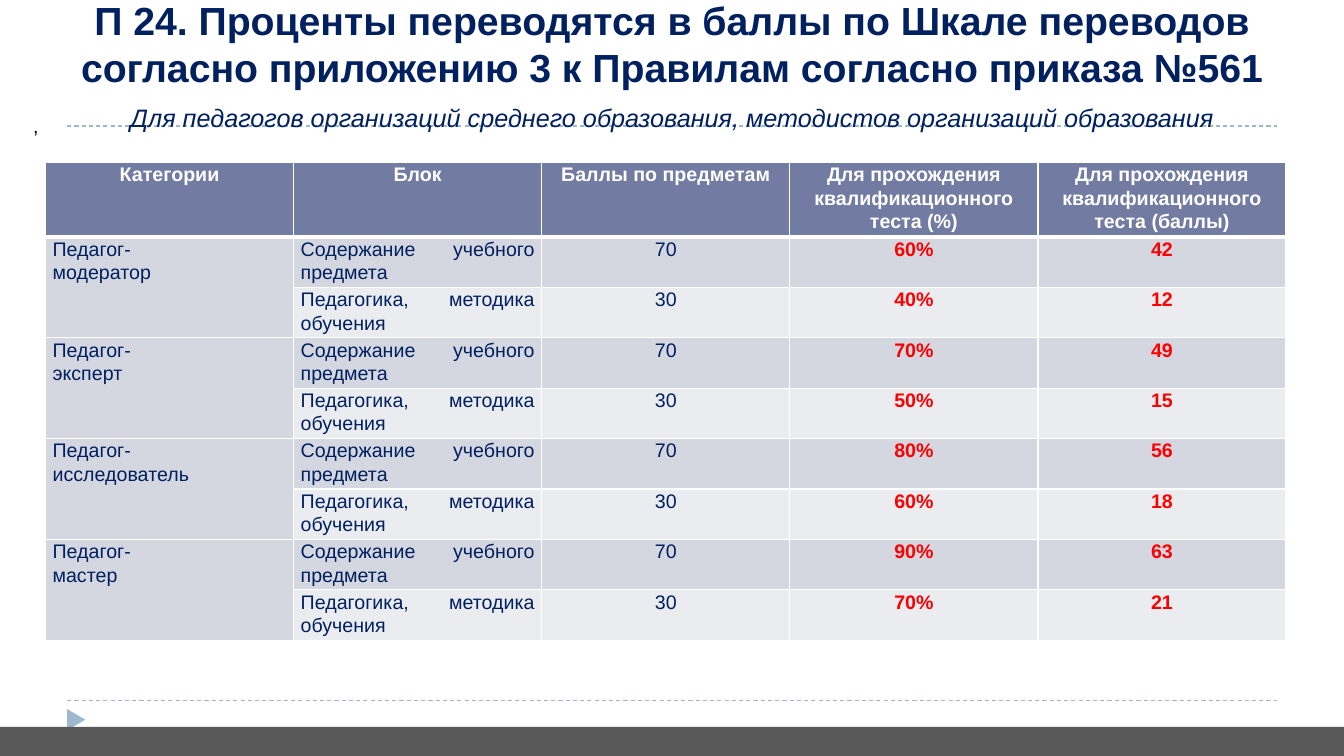
from dataclasses import dataclass

from lxml import etree
from pptx import Presentation
from pptx.dml.color import RGBColor
from pptx.enum.dml import MSO_LINE
from pptx.enum.shapes import MSO_CONNECTOR, MSO_SHAPE
from pptx.enum.text import MSO_ANCHOR, MSO_AUTO_SIZE, PP_ALIGN
from pptx.oxml.ns import qn
from pptx.util import Inches, Pt

SLIDE_WIDTH, SLIDE_HEIGHT = Inches(13.33), Inches(7.5)
NAVY, RED, WHITE, BLACK = "002060", "FF0000", "FFFFFF", "000000"
PALE_BLUE, GREY, HEADER_FILL = "9FB8CD", "595959", "727CA3"
BAND_FILLS = ("D5D7E0", "EBECF0")


@dataclass(frozen=True)
class Area:
    """A rectangle in percent of the slide's width and height."""
    left: float
    top: float
    width: float
    height: float

    def box(self) -> tuple:
        return across(self.left), down(self.top), across(self.width), down(self.height)


@dataclass(frozen=True)
class Style:
    size: int
    color: str
    bold: bool = False
    italic: bool = False
    align: PP_ALIGN = PP_ALIGN.CENTER
    spacing: float = 1.0


@dataclass(frozen=True)
class Block:
    name: str
    points: int


@dataclass(frozen=True)
class Category:
    name: str
    percents: tuple


HEADERS = (
    "Категории",
    "Блок",
    "Баллы по предметам",
    "Для прохождения квалификационного теста (%)",
    "Для прохождения квалификационного теста (баллы)",
)
BLOCKS = (
    Block("Содержание учебного предмета", 70),
    Block("Педагогика, методика обучения", 30),
)
CATEGORIES = (
    Category("модератор", (60, 40)),
    Category("эксперт", (70, 50)),
    Category("исследователь", (80, 60)),
    Category("мастер", (90, 70)),
)
TABLE_AREA = Area(3.39, 21.47, 92.3, 63.2)
HEADER_ROW, BODY_ROW = 9.87, 6.67

HEADING = Style(14, WHITE, bold=True, spacing=1.07)
LABEL = Style(14, NAVY, align=PP_ALIGN.JUSTIFY, spacing=1.07)
NUMBER = Style(14, NAVY, spacing=1.07)
THRESHOLD = Style(14, RED, bold=True, spacing=1.07)


def across(percent: float) -> int:
    return round(SLIDE_WIDTH * percent / 100)


def down(percent: float) -> int:
    return round(SLIDE_HEIGHT * percent / 100)


def rgb(color: str) -> RGBColor:
    return RGBColor.from_string(color)


def write(frame, lines: tuple, style: Style) -> None:
    for index, line in enumerate(lines):
        paragraph = frame.add_paragraph() if index else frame.paragraphs[0]
        paragraph.alignment = style.align
        paragraph.line_spacing = style.spacing
        run = paragraph.add_run()
        run.text = line
        font = run.font
        font.name, font.size = "Arial", Pt(style.size)
        font.bold, font.italic = style.bold, style.italic
        font.color.rgb = rgb(style.color)


def place_text(holder, area: Area, text: str, style: Style, room_below: float,
               wrap: bool = True) -> None:
    """Centre text vertically above room_below, a share of the slide's height."""
    holder.left, holder.top, holder.width, holder.height = area.box()
    frame = holder.text_frame
    frame.auto_size = MSO_AUTO_SIZE.NONE
    frame.word_wrap = wrap
    frame.vertical_anchor = MSO_ANCHOR.MIDDLE
    frame.margin_bottom = down(room_below)
    write(frame, (text,), style)


def add_dashed_line(slide, level: float) -> None:
    line = slide.shapes.add_connector(
        MSO_CONNECTOR.STRAIGHT, across(5), down(level), across(95), down(level))
    line.line.color.rgb = rgb(PALE_BLUE)
    line.line.width = Pt(0.75)
    line.line.dash_style = MSO_LINE.DASH
    etree.SubElement(line._element.spPr, qn("a:effectLst"))


def add_ornament(slide, kind: MSO_SHAPE, area: Area, color: str, rotation: int = 0) -> None:
    ornament = slide.shapes.add_shape(kind, *area.box())
    ornament.rotation = rotation
    ornament.shadow.inherit = False
    ornament.fill.solid()
    ornament.fill.fore_color.rgb = rgb(color)
    ornament.line.fill.background()


def fill_cell(cell, lines: tuple, style: Style, fill: str, bottom_border: float = 1) -> None:
    properties = cell._tc.get_or_add_tcPr()
    for side, width in (("L", 1), ("R", 1), ("T", 1), ("B", bottom_border)):
        border = etree.SubElement(properties, qn(f"a:ln{side}"), w=str(Pt(width)))
        paint = etree.SubElement(border, qn("a:solidFill"))
        etree.SubElement(paint, qn("a:srgbClr"), val=WHITE)
    cell.fill.solid()
    cell.fill.fore_color.rgb = rgb(fill)
    cell.margin_left = cell.margin_right = Inches(0.07)
    cell.margin_top = cell.margin_bottom = 0
    write(cell.text_frame, lines, style)


def add_score_table(slide) -> None:
    row_count = 1 + len(CATEGORIES) * len(BLOCKS)
    table = slide.shapes.add_table(row_count, len(HEADERS), *TABLE_AREA.box()).table
    table.horz_banding = False
    for column in table.columns:
        column.width = across(TABLE_AREA.width / len(HEADERS))
    for index, row in enumerate(table.rows):
        row.height = down(BODY_ROW if index else HEADER_ROW)

    for index, header in enumerate(HEADERS):
        fill_cell(table.cell(0, index), (header,), HEADING, HEADER_FILL, bottom_border=3)

    for group, category in enumerate(CATEGORIES):
        first = 1 + group * len(BLOCKS)
        name_cell = table.cell(first, 0)
        name_cell.merge(table.cell(first + len(BLOCKS) - 1, 0))
        fill_cell(name_cell, ("Педагог-", category.name), LABEL, BAND_FILLS[0])
        for offset, (block, percent) in enumerate(zip(BLOCKS, category.percents)):
            entries = (
                (block.name, LABEL),
                (f"{block.points}", NUMBER),
                (f"{percent}%", THRESHOLD),
                (f"{block.points * percent // 100}", THRESHOLD),
            )
            for column, (text, style) in enumerate(entries, start=1):
                fill_cell(table.cell(first + offset, column), (text,), style,
                          BAND_FILLS[offset])


def main() -> None:
    presentation = Presentation()
    presentation.slide_width, presentation.slide_height = SLIDE_WIDTH, SLIDE_HEIGHT
    slide = presentation.slides.add_slide(presentation.slide_layouts[5])

    for level in (92.67, 16.67):
        add_dashed_line(slide, level)
    add_ornament(slide, MSO_SHAPE.ISOSCELES_TRIANGLE, Area(4.88, 94, 1.58, 2.4), PALE_BLUE, 90)
    add_ornament(slide, MSO_SHAPE.RECTANGLE, Area(0, 96.13, 100, 3.87), GREY)

    place_text(
        slide.shapes.title, Area(0, 2.93, 100, 11.33),
        "П 24. Проценты переводятся в баллы по Шкале переводов "
        "согласно приложению 3 к Правилам согласно приказа №561",
        Style(28, NAVY, bold=True), room_below=6.4)
    place_text(
        slide.shapes.add_textbox(0, 0, 0, 0), Area(0, 14.67, 100, 6.13),
        "Для педагогов организаций среднего образования, методистов организаций образования",
        Style(18, NAVY, italic=True, spacing=0.9), room_below=4.67)
    place_text(
        slide.shapes.add_textbox(0, 0, 0, 0), Area(1.73, 14.4, 1.95, 8.53),
        ",", Style(14, BLACK, align=PP_ALIGN.LEFT), room_below=4.67, wrap=False)
    add_score_table(slide)
    presentation.save("out.pptx")


if __name__ == "__main__":
    main()
